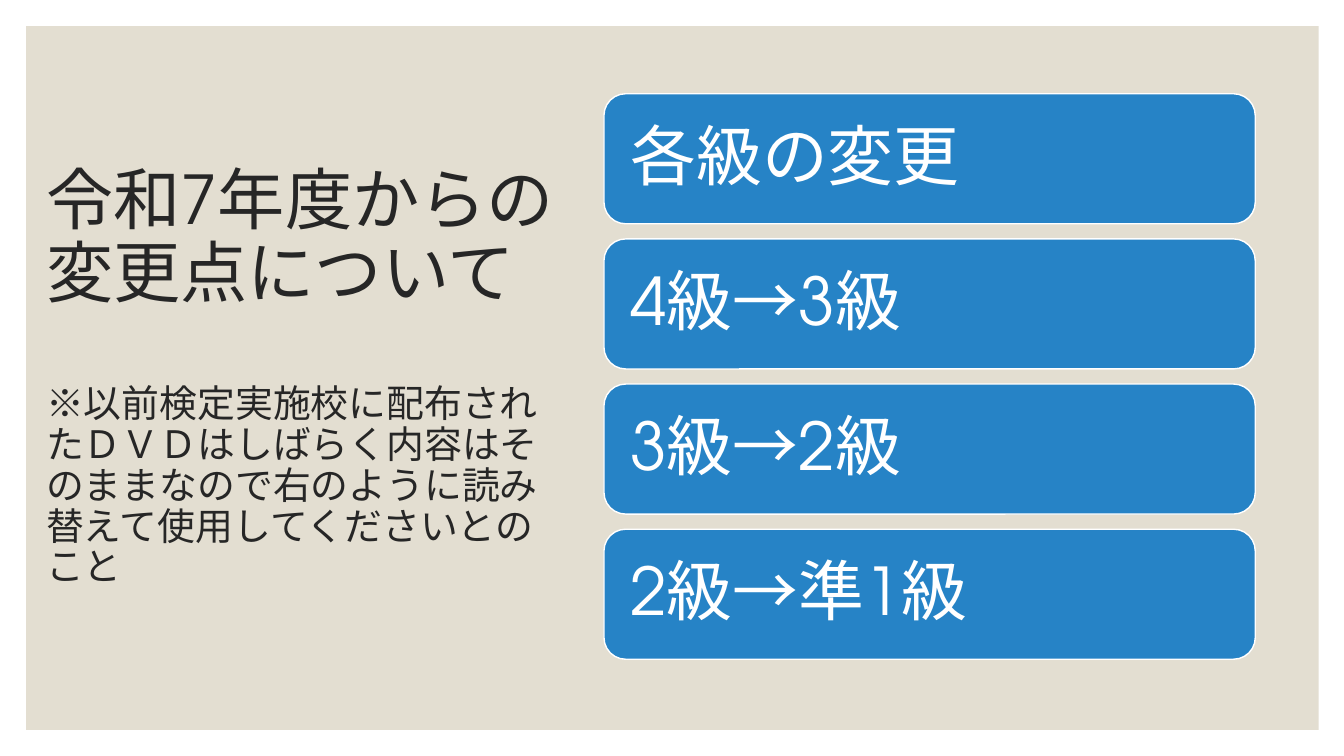
from pptx import Presentation
from pptx.dml.color import RGBColor
from pptx.enum.lang import MSO_LANGUAGE_ID
from pptx.enum.shapes import MSO_SHAPE
from pptx.enum.text import MSO_ANCHOR, PP_ALIGN
from pptx.util import Inches, Pt

BEIGE = RGBColor(0xE3, 0xDE, 0xD1)
BLUE = RGBColor(0x26, 0x83, 0xC6)
WHITE = RGBColor(0xFF, 0xFF, 0xFF)
CHARCOAL = RGBColor(0x26, 0x26, 0x26)

# Grid: 100 columns by 100 rows over the whole slide
WIDTH, HEIGHT = 13.33, 7.5
GRID = 100


class SlideBuilder:
    font_name = "TeX Gyre Adventor"
    line_spacing = 0.9

    def __init__(self, slide):
        self.slide = slide

    def place(self, column, row, columns, rows):
        return (Inches(column * WIDTH / GRID), Inches(row * HEIGHT / GRID),
                Inches(columns * WIDTH / GRID), Inches(rows * HEIGHT / GRID))

    def set_words(self, paragraph, words, size, color):
        paragraph.text = words
        paragraph.alignment = PP_ALIGN.LEFT
        paragraph.line_spacing = self.line_spacing
        for run in paragraph.runs:
            run.font.name = self.font_name
            run.font.size = Pt(size)
            run.font.color.rgb = color
            run.font.language_id = MSO_LANGUAGE_ID.JAPANESE

    def panel(self, kind, area, fill, outline=None):
        panel = self.slide.shapes.add_shape(kind, *self.place(*area))
        panel.shadow.inherit = False
        panel.fill.solid()
        panel.fill.fore_color.rgb = fill
        if outline is None:
            panel.line.fill.background()
        else:
            panel.line.color.rgb = outline
            panel.line.width = Pt(1)
        return panel

    def card(self, area, words):
        card = self.panel(MSO_SHAPE.ROUNDED_RECTANGLE, area, BLUE, WHITE)
        frame = card.text_frame
        frame.word_wrap = True
        frame.vertical_anchor = MSO_ANCHOR.MIDDLE
        frame.margin_left = frame.margin_right = Inches(0.2)
        frame.margin_top = frame.margin_bottom = Inches(0.2)
        self.set_words(frame.paragraphs[0], words, 47, WHITE)

    def heading(self, area, title, note):
        frame = self.slide.shapes.add_textbox(*self.place(*area)).text_frame
        frame.word_wrap = True
        frame.vertical_anchor = MSO_ANCHOR.MIDDLE
        self.set_words(frame.paragraphs[0], title, 48, CHARCOAL)
        remark = frame.add_paragraph()
        self.set_words(remark, note, 27, CHARCOAL)
        remark.space_before = Pt(52)


def main():
    presentation = Presentation()
    presentation.slide_width = Inches(WIDTH)
    presentation.slide_height = Inches(HEIGHT)
    builder = SlideBuilder(
        presentation.slides.add_slide(presentation.slide_layouts[6]))

    # Beige backdrop inside a white margin
    builder.panel(MSO_SHAPE.RECTANGLE, (1.95, 3.47, 96.17, 93.07), BEIGE)

    # Title and note on the left
    builder.heading(
        (2.7, 8.4, 40.21, 83.2),
        "令和7年度からの変更点について",
        "※以前検定実施校に配布されたＤＶＤはしばらく内容はそのままなので"
        "右のように読み替えて使用してくださいとのこと")

    # Grade changes on the right
    grade_changes = ["各級の変更", "4級→3級", "3級→2級", "2級→準1級"]
    for index, change in enumerate(grade_changes):
        builder.card((44.94, 12.4 + index * 19.2, 48.46, 17.2), change)

    presentation.save("out.pptx")


if __name__ == "__main__":
    main()
